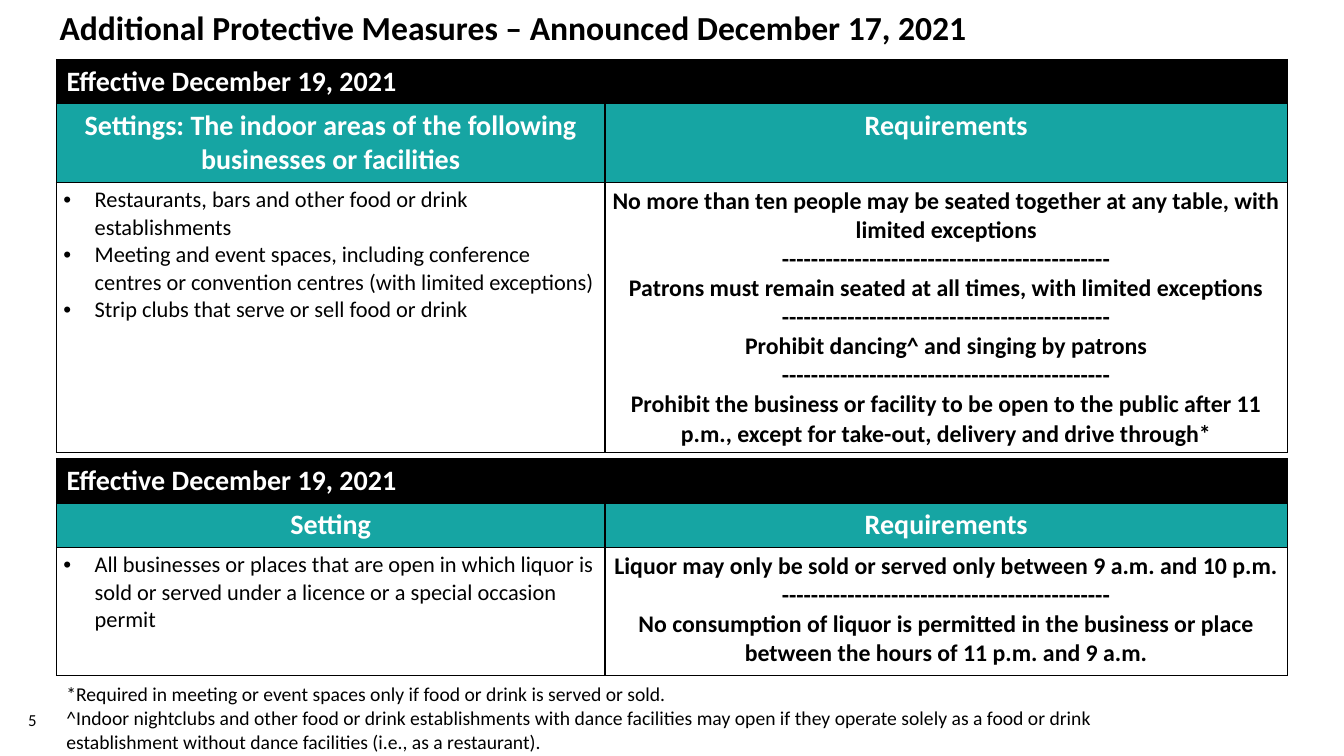
from pptx import Presentation
from pptx.dml.color import RGBColor
from pptx.enum.text import MSO_ANCHOR as Anchor, MSO_AUTO_SIZE as AutoSize, PP_ALIGN as Align
from pptx.oxml.ns import qn
from pptx.util import Inches, Pt
from lxml.etree import SubElement

COLORS = {"black": "000000", "white": "FFFFFF", "teal": "16A5A3"}
FONT = "Calibri"
DIVIDER = "-" * 45
COLUMN_WIDTHS = (5.44, 6.77)


def style(para, size, color="black", bold=False, align=None):
    para.alignment = align
    for run in para.runs:
        font = run.font
        font.name, font.size, font.bold = FONT, Pt(size), bold
        font.color.rgb = RGBColor.from_string(COLORS[color])


def add_bullet(para):
    properties = para._p.get_or_add_pPr()
    properties.set("marL", str(Inches(0.31)))
    properties.set("indent", str(-Inches(0.31)))
    SubElement(properties, qn("a:buFont"), typeface="Arial")
    SubElement(properties, qn("a:buChar"), char="•")


def add_borders(cell):
    properties = cell._tc.get_or_add_tcPr()
    for side in ("lnL", "lnR", "lnT", "lnB"):
        line = SubElement(properties, qn(f"a:{side}"), w=str(Pt(1)))
        fill = SubElement(line, qn("a:solidFill"))
        SubElement(fill, qn("a:srgbClr"), val=COLORS["black"])


def fill_cell(cell, text, fill):
    cell.fill.solid()
    cell.fill.fore_color.rgb = RGBColor.from_string(COLORS[fill])
    cell.text_frame.text = text
    return cell.text_frame.paragraphs


def add_title(page, box, text):
    title = page.shapes.title
    title.left, title.top, title.width, title.height = map(Inches, box)
    frame = title.text_frame
    frame.text = text
    frame.vertical_anchor = Anchor.TOP
    para = frame.paragraphs[0]
    style(para, 24, bold=True, align=Align.LEFT)
    para.line_spacing = 0.9


def add_measures(page, left, top, row_heights, date, headings, settings, requirements):
    frame = page.shapes.add_table(3, 2, Inches(left), Inches(top),
                                  Inches(sum(COLUMN_WIDTHS)), Inches(sum(row_heights)))
    table = frame.table
    for column, width in zip(table.columns, COLUMN_WIDTHS):
        column.width = Inches(width)
    for row, height in zip(table.rows, row_heights):
        row.height = Inches(height)
    for cell in table.iter_cells():
        add_borders(cell)

    # Date band and column headings
    table.cell(0, 0).merge(table.cell(0, 1))
    style(fill_cell(table.cell(0, 0), date, "black")[0], 20, "white", True)
    for index, heading in enumerate(headings):
        para = fill_cell(table.cell(1, index), heading, "teal")[0]
        style(para, 20, "white", True, Align.CENTER)

    # Settings and their requirements
    for index in range(2):
        cell = table.cell(2, index)
        cell.margin_left = cell.margin_right = Inches(0.07)
        cell.margin_top = cell.margin_bottom = Inches(0.04)
    for para in fill_cell(table.cell(2, 0), "\n".join(settings), "white"):
        add_bullet(para)
        style(para, 16)
    divided = f"\n{DIVIDER}\n".join(requirements)
    for para in fill_cell(table.cell(2, 1), divided, "white"):
        style(para, 17, bold=True, align=Align.CENTER)


def add_note(page, box, text, size, anchor=Anchor.TOP, auto_size=AutoSize.NONE):
    frame = page.shapes.add_textbox(*map(Inches, box)).text_frame
    frame.word_wrap = True
    frame.auto_size = auto_size
    frame.vertical_anchor = anchor
    frame.text = text
    for para in frame.paragraphs:
        style(para, size)


def build_slide(deck):
    page = deck.slides.add_slide(deck.slide_layouts[5])
    add_title(page, (0.49, 0.06, 12.62, 0.56),
              "Additional Protective Measures – Announced December 17, 2021")

    # Dining and event venues
    add_measures(
        page, 0.56, 0.59, (0.44, 0.78, 2.67), "Effective December 19, 2021",
        ("Settings: The indoor areas of the following businesses or facilities", "Requirements"),
        ("Restaurants, bars and other food or drink establishments",
         "Meeting and event spaces, including conference centres or convention centres "
         "(with limited exceptions)",
         "Strip clubs that serve or sell food or drink"),
        ("No more than ten people may be seated together at any table, with limited exceptions",
         "Patrons must remain seated at all times, with limited exceptions",
         "Prohibit dancing^ and singing by patrons",
         "Prohibit the business or facility to be open to the public after 11 p.m., "
         "except for take-out, delivery and drive through*"))

    # Liquor service
    add_measures(
        page, 0.56, 4.55, (0.44, 0.44, 1.27), "Effective December 19, 2021",
        ("Setting", "Requirements"),
        ("All businesses or places that are open in which liquor is sold or served "
         "under a licence or a special occasion permit",),
        ("Liquor may only be sold or served only between 9 a.m. and 10 p.m.",
         "No consumption of liquor is permitted in the business or place "
         "between the hours of 11 p.m. and 9 a.m."))

    # Footnotes and page number
    add_note(page, (0.56, 6.72, 10.95, 0.81),
             "*Required in meeting or event spaces only if food or drink is served or sold.\n"
             "^Indoor nightclubs and other food or drink establishments with dance facilities "
             "may open if they operate solely as a food or drink establishment without dance "
             "facilities (i.e., as a restaurant).", 14, auto_size=AutoSize.SHAPE_TO_FIT_TEXT)
    add_note(page, (0.18, 6.94, 0.56, 0.4), "5", 12, Anchor.MIDDLE)


def main():
    deck = Presentation()
    deck.slide_width, deck.slide_height = Inches(13.33), Inches(7.5)
    build_slide(deck)
    deck.save("out.pptx")


if __name__ == "__main__":
    main()
